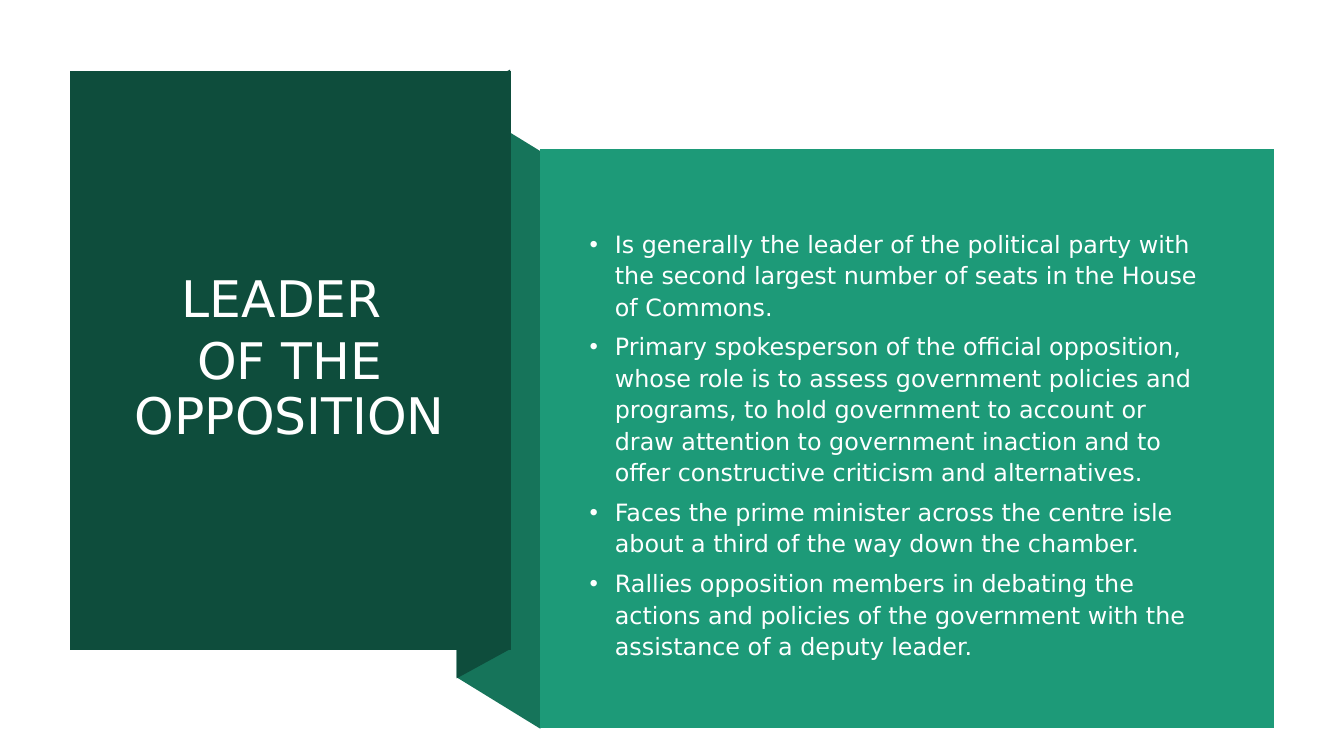
"""Build the Leader of the Opposition slide with its folded ribbon panels."""
from dataclasses import dataclass

from lxml import etree
from pptx import Presentation
from pptx.dml.color import RGBColor
from pptx.enum import text
from pptx.oxml import ns
from pptx.util import Inches, Pt

FONT = "DejaVu Sans"
COLOURS = {"dark": "0E4D3C", "fold": "16745A", "panel": "1D9A78", "title": "FFFFFF", "body": "FEFFFF"}


@dataclass(frozen=True)
class Panel:
    """A filled outline given by its corners in inches."""
    colour: str
    corners: tuple[tuple[float, float], ...]


@dataclass(frozen=True)
class Copy:
    """Paragraphs with their box and type settings."""
    paragraphs: tuple[str, ...]
    box: tuple[float, float, float, float]
    colour: str
    size: int
    line_spacing: float
    alignment: text.PP_ALIGN
    bulleted: bool = False


def block(left: float, top: float, right: float, bottom: float) -> tuple[tuple[float, float], ...]:
    """Return the corners of an upright rectangle."""
    return (left, top), (right, top), (right, bottom), (left, bottom)


PANELS = (
    Panel("fold", ((5.36, 7.23), (4.53, 6.72), (4.53, 0.99), (5.36, 1.5))),
    Panel("dark", ((5.06, 6.44), (4.53, 6.73), (4.53, 0.98), (5.06, 0.69))),
    Panel("dark", block(0.69, 0.7, 5.07, 6.45)),
)
DUTIES_PANEL = (5.36, 1.48, 7.28, 5.74)

HEADING = Copy(
    ("LEADER ", "OF THE OPPOSITION"),
    (1.02, 1.07, 3.71, 4.99), "title", 36, 0.9, text.PP_ALIGN.CENTER,
)
DUTIES = Copy(
    (
        "Is generally the leader of the political party with the second largest number of seats "
        "in the House of Commons.",
        "Primary spokesperson of the official opposition, whose role is to assess government "
        "policies and programs, to hold government to account or draw attention to government "
        "inaction and to offer constructive criticism and alternatives.",
        "Faces the prime minister across the centre isle about a third of the way down the chamber.",
        "Rallies opposition members in debating the actions and policies of the government with "
        "the assistance of a deputy leader.",
    ),
    (5.56, 2.03, 6.51, 4.74), "body", 17, 1.1, text.PP_ALIGN.LEFT, True,
)


def apply(target, values: dict) -> None:
    """Set each attribute named in values."""
    for name, value in values.items():
        setattr(target, name, value)


def paint(shape, colour: str) -> None:
    """Give a shape a flat fill without outline or shadow."""
    shape.shadow.inherit = False
    shape.fill.solid()
    shape.fill.fore_color.rgb = RGBColor.from_string(COLOURS[colour])
    shape.line.fill.background()


def draw_panel(slide, panel: Panel) -> None:
    """Draw one outline of the ribbon."""
    start, *rest = [(Inches(x), Inches(y)) for x, y in panel.corners]
    outline = slide.shapes.build_freeform(*start)
    outline.add_line_segments(rest, close=True)
    paint(outline.convert_to_shape(), panel.colour)


def add_bullet(paragraph) -> None:
    """Give a paragraph a hanging round bullet."""
    properties = paragraph._p.get_or_add_pPr()
    properties.set("marL", str(Inches(0.44)))
    properties.set("indent", str(Inches(-0.25)))
    etree.SubElement(properties, ns.qn("a:buFont")).set("typeface", "Arial")
    etree.SubElement(properties, ns.qn("a:buChar")).set("char", "•")


def write(frame, copy: Copy) -> None:
    """Fill a text frame with formatted paragraphs."""
    apply(frame, {
        "text": "\n".join(copy.paragraphs),
        "word_wrap": True,
        "auto_size": text.MSO_AUTO_SIZE.NONE,
        "vertical_anchor": text.MSO_ANCHOR.MIDDLE,
    })
    for paragraph in frame.paragraphs:
        apply(paragraph, {
            "alignment": copy.alignment,
            "line_spacing": copy.line_spacing,
            "space_after": Pt(6),
        })
        if copy.bulleted:
            add_bullet(paragraph)
        for run in paragraph.runs:
            apply(run.font, {"name": FONT, "size": Pt(copy.size)})
            run.font.color.rgb = RGBColor.from_string(COLOURS[copy.colour])


def main() -> None:
    """Assemble and save the slide."""
    deck = Presentation()
    apply(deck, {"slide_width": Inches(13.33), "slide_height": Inches(7.5)})
    slide = deck.slides.add_slide(deck.slide_layouts.get_by_name("Title Only"))
    for panel in PANELS:
        draw_panel(slide, panel)

    heading = slide.shapes.title
    slide.shapes.element.append(heading.element)
    apply(heading, dict(zip(("left", "top", "width", "height"), map(Inches, HEADING.box))))
    write(heading.text_frame, HEADING)

    left, top, width, height = DUTIES_PANEL
    draw_panel(slide, Panel("panel", block(left, top, left + width, top + height)))
    duties = slide.shapes.add_textbox(*map(Inches, DUTIES.box))
    write(duties.text_frame, DUTIES)
    deck.save("out.pptx")


if __name__ == "__main__":
    main()
